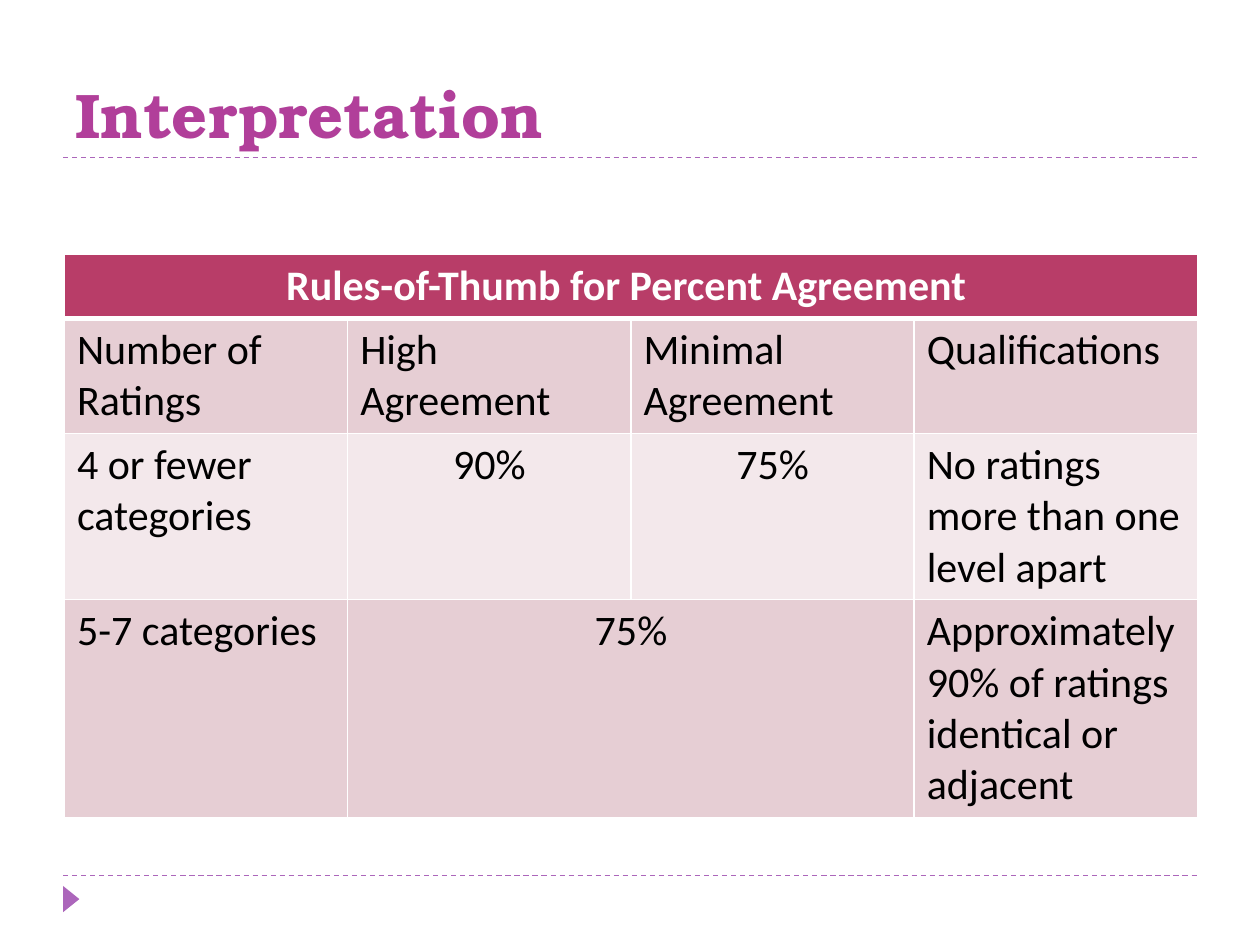
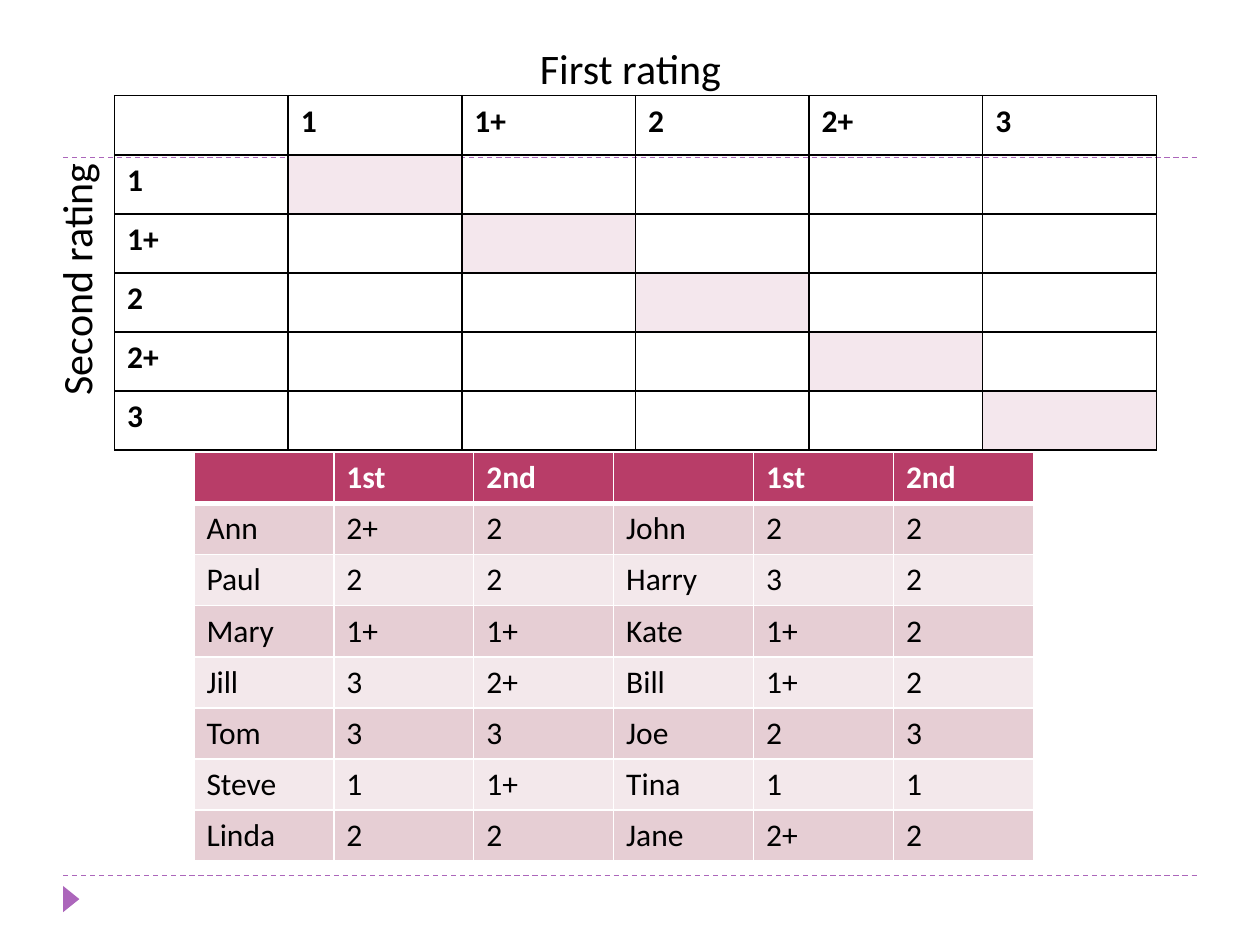
from dataclasses import dataclass, field
from typing import Any, Callable, Optional

from lxml import etree
from pptx import Presentation
from pptx import util as u
from pptx.dml.color import RGBColor
from pptx.enum import dml, shapes, text
from pptx.oxml import ns

INK, WHITE = "000000", "FFFFFF"
MAUVE, PLUM, ROSE = "AC66BB", "B13F9A", "B83D68"
BANDS = ("F3E8EB", "E6CED4")
TINT = "F4E7ED"
BODY, HEAD = "Calibri", "TeX Gyre Bonum"
LEFT, RIGHT = 1.27, 24.13
RULES = (17.65, 3.18)
MID = text.PP_ALIGN.CENTER
Box = tuple[float, float, float, float]


@dataclass
class Label:
    words: str
    box: Box
    size: int = 24
    font: str = BODY
    ink: str = INK
    bold: bool = False
    align: Optional[text.PP_ALIGN] = MID
    anchor: text.MSO_ANCHOR = text.MSO_ANCHOR.TOP
    turn: str = "horz"


@dataclass
class Grid:
    rows: list[list[str]]
    left: float
    top: float
    wide: float
    highs: list[float]
    size: int
    edge: str
    fill: Callable[[int, int], Optional[str]]
    head: bool = True
    merge: list[tuple[int, int, int]] = field(default_factory=list)
    mids: list[tuple[int, int]] = field(default_factory=list)


def tone(code: str) -> RGBColor:
    return RGBColor.from_string(code)


def style(frame: Any, size: int, ink: str, bold: bool,
          font: str = BODY, align: Optional[text.PP_ALIGN] = None) -> None:
    for para in frame.paragraphs:
        para.alignment = align
        for run in para.runs:
            run.font.size = u.Pt(size)
            run.font.name = font
            run.font.bold = bold
            run.font.color.rgb = tone(ink)


def rule(slide: Any, y: float) -> None:
    line = slide.shapes.add_connector(
        shapes.MSO_CONNECTOR.STRAIGHT, u.Cm(LEFT), u.Cm(y), u.Cm(RIGHT), u.Cm(y))
    line.line.color.rgb = tone(MAUVE)
    line.line.width = u.Pt(0.75)
    line.line.dash_style = dml.MSO_LINE.DASH
    etree.SubElement(line._element.spPr, ns.qn("a:effectLst"))


def page(deck: Any) -> Any:
    slide = deck.slides.add_slide(deck.slide_layouts[6])
    for y in RULES:
        rule(slide, y)
    mark = slide.shapes.add_shape(
        shapes.MSO_SHAPE.ISOSCELES_TRIANGLE,
        u.Cm(1.17), u.Cm(17.96), u.Cm(0.53), u.Cm(0.33))
    mark.rotation = 90
    mark.shadow.inherit = False
    mark.fill.solid()
    mark.fill.fore_color.rgb = tone(MAUVE)
    mark.line.fill.background()
    return slide


def write(slide: Any, label: Label) -> None:
    box = slide.shapes.add_textbox(*map(u.Cm, label.box))
    frame = box.text_frame
    frame.word_wrap = True
    frame.vertical_anchor = label.anchor
    frame.text = label.words
    style(frame, label.size, label.ink, label.bold, label.font, label.align)
    box._element.txBody.find(ns.qn("a:bodyPr")).set("vert", label.turn)


def border(cell: Any, hue: str, top: int, base: int) -> None:
    props = cell._tc.get_or_add_tcPr()
    for side, width in (("L", 1), ("R", 1), ("T", top), ("B", base)):
        line = etree.SubElement(props, ns.qn(f"a:ln{side}"), w=str(u.Pt(width)))
        paint = etree.SubElement(line, ns.qn("a:solidFill"))
        etree.SubElement(paint, ns.qn("a:srgbClr"), val=hue)


def draw(slide: Any, grid: Grid) -> None:
    count = len(grid.rows[0])
    table = slide.shapes.add_table(
        len(grid.rows), count, u.Cm(grid.left), u.Cm(grid.top),
        u.Cm(grid.wide * count), u.Cm(sum(grid.highs))).table
    table.first_row = table.horz_banding = False
    for col in table.columns:
        col.width = u.Cm(grid.wide)
    for row, high in zip(table.rows, grid.highs):
        row.height = u.Cm(high)
    for r, start, end in grid.merge:
        table.cell(r, start).merge(table.cell(r, end))
    for r, row in enumerate(grid.rows):
        for c, words in enumerate(row):
            cell = table.cell(r, c)
            border(cell, grid.edge, 3 if grid.head and r == 1 else 1,
                   3 if grid.head and r == 0 else 1)
            hue = grid.fill(r, c)
            if hue:
                cell.fill.solid()
                cell.fill.fore_color.rgb = tone(hue)
            else:
                cell.fill.background()
            if words:
                cell.text_frame.text = words
                style(cell.text_frame, grid.size,
                      WHITE if grid.head and r == 0 else INK,
                      r == 0 or not grid.head,
                      align=MID if (r, c) in grid.mids else None)


def banded(r: int, c: int) -> str:
    return BANDS[r % 2] if r else ROSE


def matched(r: int, c: int) -> Optional[str]:
    return TINT if r == c and r else None


TITLE = Label("Interpretation", (LEFT, 0.43, 22.86, 2.74), 36, HEAD, PLUM, True,
              None, text.MSO_ANCHOR.BOTTOM)
GUIDE = Grid(
    [["Rules-of-Thumb for Percent Agreement ", "", "", ""],
     ["Number of Ratings", "High Agreement", "Minimal Agreement", "Qualifications"],
     ["4 or fewer categories", "90%", "75%", "No ratings more than one level apart"],
     ["5-7 categories", "75%", "", "Approximately 90% of ratings identical or adjacent"]],
    1.3, 5.13, 5.71, [1.29, 2.32, 3.35, 4.39], 24, WHITE, banded,
    merge=[(0, 0, 3), (3, 1, 2)], mids=[(0, 0), (2, 1), (2, 2), (3, 1)])

MARKS = ["1", "1+", "2", "2+", "3"]
CROSS = Grid([["", *MARKS], *([mark] + [""] * 5 for mark in MARKS)],
             2.31, 1.93, 3.5, [1.19] * 6, 18, INK, matched, head=False)
AXES = [
    Label("Second rating", (0.89, 2.13, 1.55, 7.01), turn="vert270"),
    Label("First rating", (2.31, 0.74, 20.8, 1.27)),
]
PAIRS = [
    "Ann 2+ 2 John 2 2",
    "Paul 2 2 Harry 3 2",
    "Mary 1+ 1+ Kate 1+ 2",
    "Jill 3 2+ Bill 1+ 2",
    "Tom 3 3 Joe 2 3",
    "Steve 1 1+ Tina 1 1",
    "Linda 2 2 Jane 2+ 2",
]
ROSTER = Grid([["", "1st", "2nd"] * 2, *(pair.split() for pair in PAIRS)],
              3.91, 9.12, 2.82, [1.03] * 8, 18, WHITE, banded)


def main() -> None:
    deck = Presentation()
    deck.slide_width, deck.slide_height = u.Cm(25.4), u.Cm(19.05)
    first = page(deck)
    write(first, TITLE)
    draw(first, GUIDE)
    second = page(deck)
    draw(second, CROSS)
    for label in AXES:
        write(second, label)
    draw(second, ROSTER)
    deck.save("out.pptx")


if __name__ == "__main__":
    main()
